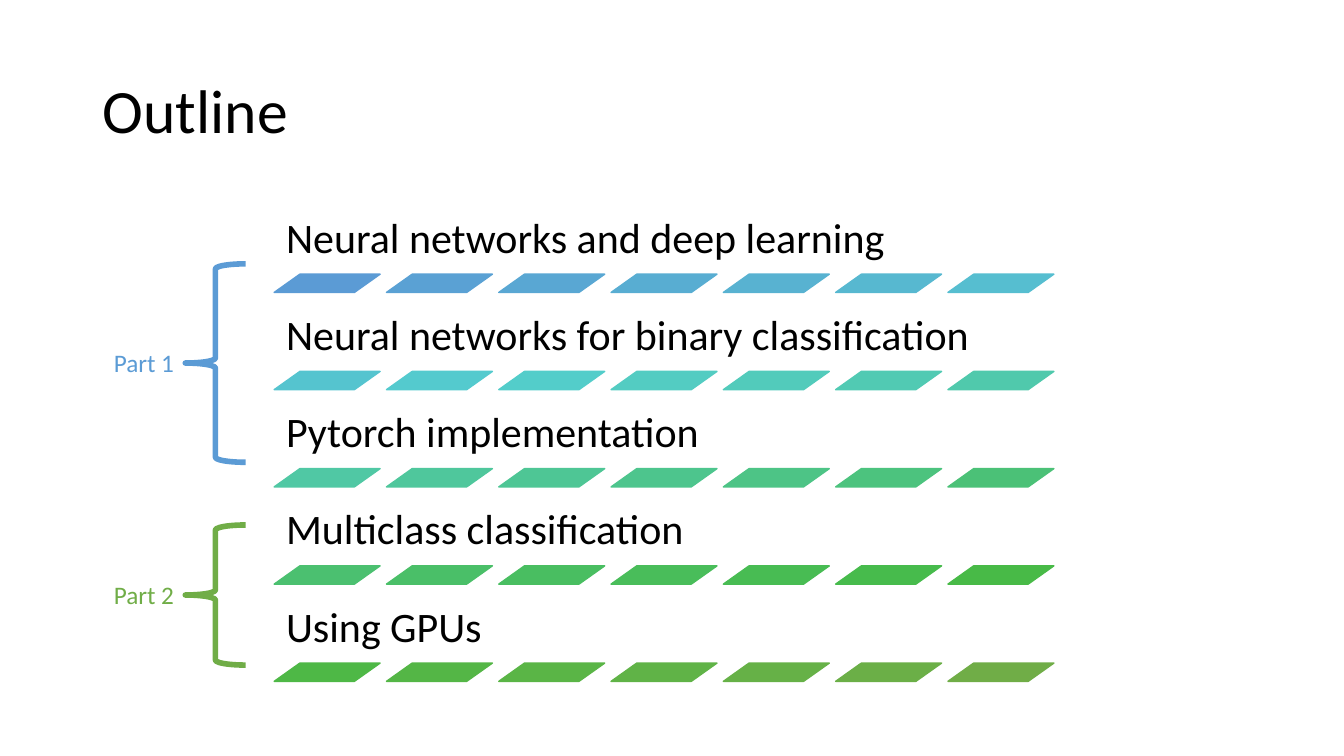
from colorsys import hls_to_rgb, rgb_to_hls

from pptx import Presentation
from pptx.dml.color import RGBColor
from pptx.enum.shapes import MSO_SHAPE
from pptx.enum.text import MSO_ANCHOR, MSO_AUTO_SIZE
from pptx.util import Cm, Pt

PARALLELOGRAM = MSO_SHAPE.PARALLELOGRAM
LEFT_BRACE = MSO_SHAPE.LEFT_BRACE
TOP, MIDDLE, BOTTOM = MSO_ANCHOR.TOP, MSO_ANCHOR.MIDDLE, MSO_ANCHOR.BOTTOM
FIT_SHAPE = MSO_AUTO_SIZE.SHAPE_TO_FIT_TEXT

BLACK = RGBColor(0x00, 0x00, 0x00)
BLUE = RGBColor(0x5B, 0x9B, 0xD5)
GREEN = RGBColor(0x70, 0xAD, 0x47)
FONT = "Calibri"

TOPICS = [
    "Neural networks and deep learning",
    "Neural networks for binary classification",
    "Pytorch implementation",
    "Multiclass classification",
    "Using GPUs",
]
# Name, colour, brace top, brace height, label top (cm)
PARTS = [
    ("Part 1", BLUE, 6.65, 5.0, 8.64),
    ("Part 2", GREEN, 13.23, 3.53, 14.48),
]

# Topic grid (cm)
TOPIC_LEFT, TOPIC_TOP, TOPIC_PITCH = 6.91, 5.08, 2.45
TOPIC_WIDTH, TOPIC_HEIGHT = 20.04, 1.83
DASHES, DASH_PITCH = 7, 2.83
DASH_WIDTH, DASH_HEIGHT, DASH_SLANT = 2.67, 0.46, 1.408


def blend(start, end, share):
    """Mix two colours along hue, lightness and saturation."""
    first, last = (rgb_to_hls(*(c / 255 for c in rgb)) for rgb in (start, end))
    mixed = (a + (b - a) * share for a, b in zip(first, last))
    return RGBColor(*(round(c * 255) for c in hls_to_rgb(*mixed)))


def add_text(slide, text, left, top, width, height, *, size, color=BLACK,
             anchor=TOP, inset=None, line_spacing=None, wrap=True):
    box = slide.shapes.add_textbox(Cm(left), Cm(top), Cm(width), Cm(height))
    frame = box.text_frame
    frame.word_wrap = wrap
    frame.vertical_anchor = anchor
    if not wrap:
        frame.auto_size = FIT_SHAPE
    if inset is not None:
        frame.margin_left = frame.margin_right = Cm(inset)
        frame.margin_top = frame.margin_bottom = Cm(inset)
    paragraph = frame.paragraphs[0]
    paragraph.line_spacing = line_spacing
    run = paragraph.add_run()
    run.text = text
    run.font.name = FONT
    run.font.size = Pt(size)
    run.font.color.rgb = color


def add_outlined(slide, preset, left, top, width, height, color, weight):
    shape = slide.shapes.add_shape(
        preset, Cm(left), Cm(top), Cm(width), Cm(height))
    shape.shadow.inherit = False
    shape.line.color.rgb = color
    shape.line.width = Pt(weight)
    return shape


def add_dash(slide, left, top, color):
    dash = add_outlined(slide, PARALLELOGRAM, left, top,
                        DASH_WIDTH, DASH_HEIGHT, color, 1)
    dash.adjustments[0] = DASH_SLANT
    dash.fill.solid()
    dash.fill.fore_color.rgb = color


def add_topic(slide, row, topic):
    top = TOPIC_TOP + row * TOPIC_PITCH
    add_text(slide, topic, TOPIC_LEFT, top, TOPIC_WIDTH, TOPIC_HEIGHT,
             size=30, anchor=BOTTOM, inset=0.3, line_spacing=0.9)
    last_dash = len(TOPICS) * DASHES - 1
    for column in range(DASHES):
        color = blend(BLUE, GREEN, (row * DASHES + column) / last_dash)
        add_dash(slide, TOPIC_LEFT + column * DASH_PITCH,
                 top + TOPIC_HEIGHT, color)


def add_part(slide, name, color, brace_top, brace_height, label_top):
    brace = add_outlined(slide, LEFT_BRACE, 4.67, brace_top,
                         1.52, brace_height, color, 4)
    brace.fill.background()
    add_text(slide, name, 2.62, label_top, 2.03, 1.02,
             size=18, color=color, wrap=False)


def main():
    prs = Presentation()
    prs.slide_width, prs.slide_height = Cm(33.87), Cm(19.05)
    slide = prs.slides.add_slide(prs.slide_layouts[6])

    # Title
    add_text(slide, "Outline", 2.34, 1.02, 29.21, 3.68,
             size=44, anchor=MIDDLE, line_spacing=0.9)

    # Topics with their dashed underlines
    for row, topic in enumerate(TOPICS):
        add_topic(slide, row, topic)

    # Braces that group the topics into parts
    for part in PARTS:
        add_part(slide, *part)

    prs.save("out.pptx")


if __name__ == "__main__":
    main()
